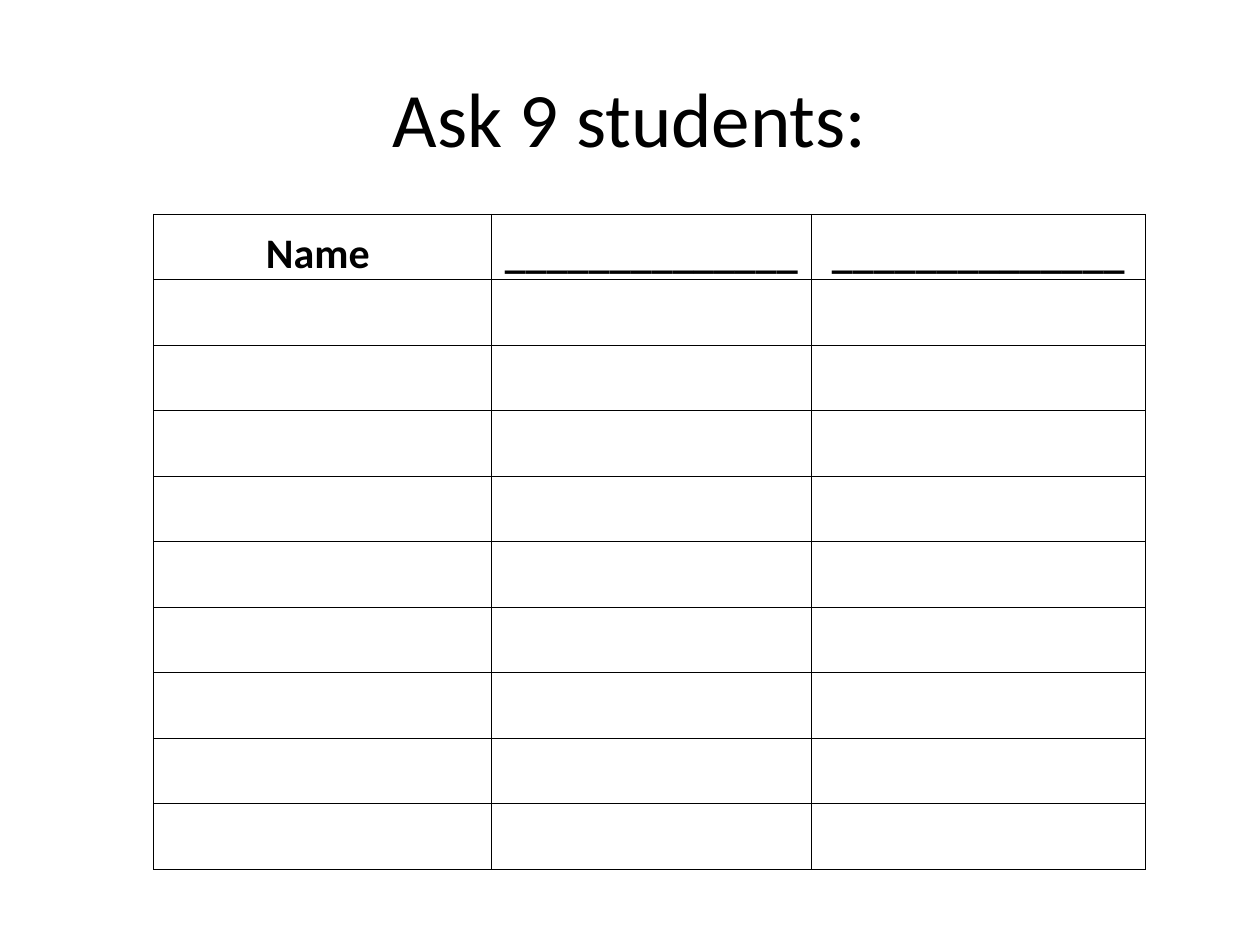
from lxml.etree import SubElement
from pptx import Presentation
from pptx.dml.color import RGBColor
from pptx.enum.text import MSO_ANCHOR, PP_ALIGN
from pptx.oxml.ns import qn
from pptx.util import Inches, Pt

COLORS = {"background": "FFFFFF", "text": "000000", "border": "000000"}
BLANK = "_" * 14
HEADINGS = ["Name ", BLANK, BLANK]
COLUMN_WIDTHS = [2.68, 2.54, 2.65]
STUDENTS = 9
ROW_HEIGHT = 0.52


class SurveySlide:
    """Holds the style and the slide being built."""

    font = "Calibri"
    border_width = Pt(0.5)

    def __init__(self, slide):
        self.slide = slide
        fill = slide.background.fill
        fill.solid()
        fill.fore_color.rgb = RGBColor.from_string(COLORS["background"])

    def set_text(self, frame, text, size, bold=False):
        frame.text = text
        paragraph = frame.paragraphs[0]
        paragraph.alignment = PP_ALIGN.CENTER
        font = paragraph.runs[0].font
        font.name, font.size, font.bold = self.font, Pt(size), bold
        font.color.rgb = RGBColor.from_string(COLORS["text"])

    def title(self, text, left, top, width, height):
        box = self.slide.shapes.add_textbox(
            Inches(left), Inches(top), Inches(width), Inches(height))
        frame = box.text_frame
        frame.word_wrap = True
        frame.vertical_anchor = MSO_ANCHOR.MIDDLE
        self.set_text(frame, text, 44)

    def border(self, cell):
        properties = cell._tc.get_or_add_tcPr()
        for position, side in enumerate(("lnL", "lnR", "lnT", "lnB")):
            line = SubElement(properties, qn(f"a:{side}"), w=str(self.border_width))
            properties.insert(position, line)  # borders precede the cell fill
            solid = SubElement(line, qn("a:solidFill"))
            SubElement(solid, qn("a:srgbClr"), val=COLORS["border"])

    def table(self, headings, widths, blank_rows, left, top, row_height):
        rows = blank_rows + 1
        grid = self.slide.shapes.add_table(
            rows, len(headings), Inches(left), Inches(top),
            Inches(sum(widths)), Inches(rows * row_height)).table
        grid.first_row = grid.horz_banding = False
        for column, width in zip(grid.columns, widths):
            column.width = Inches(width)
        for row in grid.rows:
            row.height = Inches(row_height)
        for cell in grid.iter_cells():
            cell.fill.background()
            cell.vertical_anchor = MSO_ANCHOR.BOTTOM
            cell.margin_left = cell.margin_right = cell.margin_top = Inches(0.01)
            cell.margin_bottom = 0
            self.border(cell)
        for column, heading in enumerate(headings):
            self.set_text(grid.cell(0, column).text_frame, heading, 24, bold=True)


def main():
    presentation = Presentation()
    presentation.slide_width = Inches(10)
    presentation.slide_height = Inches(7.5)
    survey = SurveySlide(presentation.slides.add_slide(presentation.slide_layouts[6]))

    # Title
    survey.title("Ask 9 students:", 0.5, 0.3, 9, 1.25)

    # Answer grid: one heading row and one row per student
    survey.table(HEADINGS, COLUMN_WIDTHS, STUDENTS, 1.22, 1.7, ROW_HEIGHT)

    presentation.save("out.pptx")


if __name__ == "__main__":
    main()
